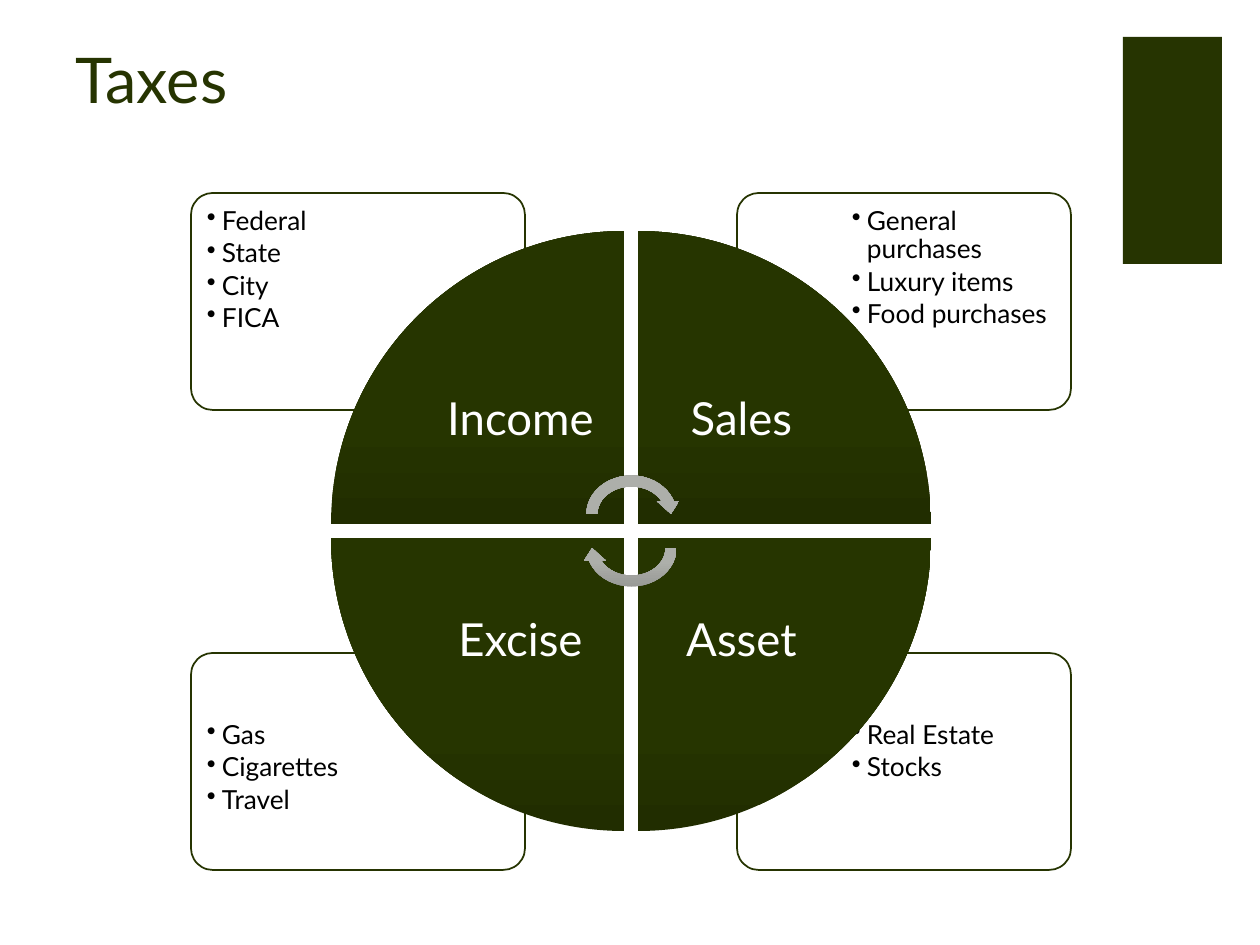
import pptx
import pptx.dml.color
import pptx.enum.shapes
import pptx.enum.text
import pptx.oxml.ns
import pptx.oxml.xmlchemy
import pptx.util

RGBColor = pptx.dml.color.RGBColor
SHAPES = pptx.enum.shapes.MSO_SHAPE
ANCHOR = pptx.enum.text.MSO_ANCHOR
ALIGN = pptx.enum.text.PP_ALIGN
qn = pptx.oxml.ns.qn

OLIVE = RGBColor(0x26, 0x34, 0x01)
WEDGE = RGBColor(0x26, 0x35, 0x00)
WEDGE_SHADE = RGBColor(0x21, 0x2D, 0x00)
GREY = RGBColor(0xAD, 0xAF, 0xAA)
GREY_SHADE = RGBColor(0x94, 0x95, 0x92)
WHITE = RGBColor(0xFF, 0xFF, 0xFF)
BLACK = RGBColor(0x00, 0x00, 0x00)

FONT = "Lato"
EMU_PER_PX = 914400 / 126


def px(length):
    return pptx.util.Emu(round(length * EMU_PER_PX))


def append_element(parent, tag, name, value):
    """Append a child that carries one attribute."""
    child = pptx.oxml.xmlchemy.OxmlElement(tag)
    child.set(name, value)
    parent.append(child)


def write_text(frame, lines, size, color, align=ALIGN.LEFT, anchor=ANCHOR.TOP,
               inset=None, spacing=None, after=0, bullet_indent=None):
    """Fill a text frame, one paragraph a line; bullet_indent in px turns bullets on."""
    frame.word_wrap = True
    frame.auto_size = pptx.enum.text.MSO_AUTO_SIZE.NONE
    frame.vertical_anchor = anchor
    if inset is not None:
        frame.margin_left = frame.margin_right = px(inset)
        frame.margin_top = frame.margin_bottom = px(inset)
    for index, line in enumerate(lines):
        paragraph = frame.add_paragraph() if index else frame.paragraphs[0]
        paragraph.alignment = align
        paragraph.line_spacing = spacing
        paragraph.space_before = pptx.util.Pt(0)
        paragraph.space_after = pptx.util.Pt(after)
        run = paragraph.add_run()
        run.text = line
        run.font.name = FONT
        run.font.size = pptx.util.Pt(size)
        run.font.color.rgb = color
        if bullet_indent:
            paragraph.level = 1
            properties = paragraph._p.get_or_add_pPr()
            properties.set("marL", str(px(bullet_indent)))
            properties.set("indent", str(-px(bullet_indent)))
            append_element(properties, "a:buChar", "char", "•")


class SlideBuilder:
    def __init__(self, slide):
        self.slide = slide

    def title(self, text, left, top, width, height):
        title = self.slide.shapes.title
        title.left, title.top = px(left), px(top)
        title.width, title.height = px(width), px(height)
        write_text(title.text_frame, [text], 36, OLIVE, anchor=ANCHOR.BOTTOM)

    def shape(self, preset, left, top, width, height, color):
        shape = self.slide.shapes.add_shape(
            preset, px(left), px(top), px(width), px(height))
        shape.shadow.inherit = False
        shape.line.fill.background()
        shape.fill.solid()
        shape.fill.fore_color.rgb = color
        return shape

    def card(self, left, top, width, height):
        card = self.shape(SHAPES.ROUNDED_RECTANGLE, left, top, width, height, WHITE)
        card.adjustments[0] = 0.1
        card.line.color.rgb = OLIVE
        card.line.width = pptx.util.Pt(1)
        fill_color = card._element.spPr.find(qn("a:solidFill"))[0]
        append_element(fill_color, "a:alpha", "val", "90000")

    def shaded(self, preset, left, top, width, height, rotation, color, shade):
        """Add a turned shape whose lower edge stays the shaded one."""
        shape = self.shape(preset, left, top, width, height, color)
        shape.rotation = rotation
        shape.fill.gradient()
        shape.fill.gradient_angle = 90
        for stop, position, stop_color in zip(
                shape.fill.gradient_stops, (0, 0.35), (shade, color)):
            stop.position = position
            stop.color.rgb = stop_color
        shape._element.spPr.find(qn("a:gradFill")).set("rotWithShape", "0")

    def text(self, lines, left, top, width, height, **text_format):
        box = self.slide.shapes.add_textbox(px(left), px(top), px(width), px(height))
        write_text(box.text_frame, lines, **text_format)


def main():
    presentation = pptx.Presentation()
    presentation.slide_width = px(1260)
    presentation.slide_height = px(945)
    builder = SlideBuilder(presentation.slides.add_slide(presentation.slide_layouts[5]))

    builder.shape(SHAPES.RECTANGLE, 1123, 37, 99, 227, OLIVE)
    builder.title("Taxes", 63, 39, 897, 83)

    # name, column, row, wedge rotation, examples
    taxes = [
        ("Income", 0, 0, 0, ["Federal", "State", "City", "FICA"]),
        ("Sales", 1, 0, 90, ["General purchases", "Luxury items", "Food purchases"]),
        ("Asset", 1, 1, 180, ["Real Estate", "Stocks"]),
        ("Excise", 0, 1, 270, ["Gas", "Cigarettes", "Travel"]),
    ]
    for _, column, row, _, examples in reversed(taxes):
        builder.card((191, 737)[column], (193, 653)[row], 334, 217)
        builder.text(examples, (197, 842)[column], (198, 712)[row], 224, 152,
                     size=15, color=BLACK, inset=10, spacing=0.9, after=2.25,
                     bullet_indent=15)

    for name, column, row, rotation, _ in taxes:
        builder.shaded(SHAPES.PIE_WEDGE, (331, 638)[column], (231, 538)[row],
                       293, 293, rotation, WEDGE, WEDGE_SHADE)
        builder.text([name], (417, 638)[column], (317, 538)[row], 207, 207,
                     size=26, color=WHITE, align=ALIGN.CENTER, anchor=ANCHOR.MIDDLE,
                     inset=25, spacing=0.9)

    for top, rotation in ((470, 0), (504, 180)):
        builder.shaded(SHAPES.CIRCULAR_ARROW, 581, top, 101, 88,
                       rotation, GREY, GREY_SHADE)

    presentation.save("out.pptx")


if __name__ == "__main__":
    main()
